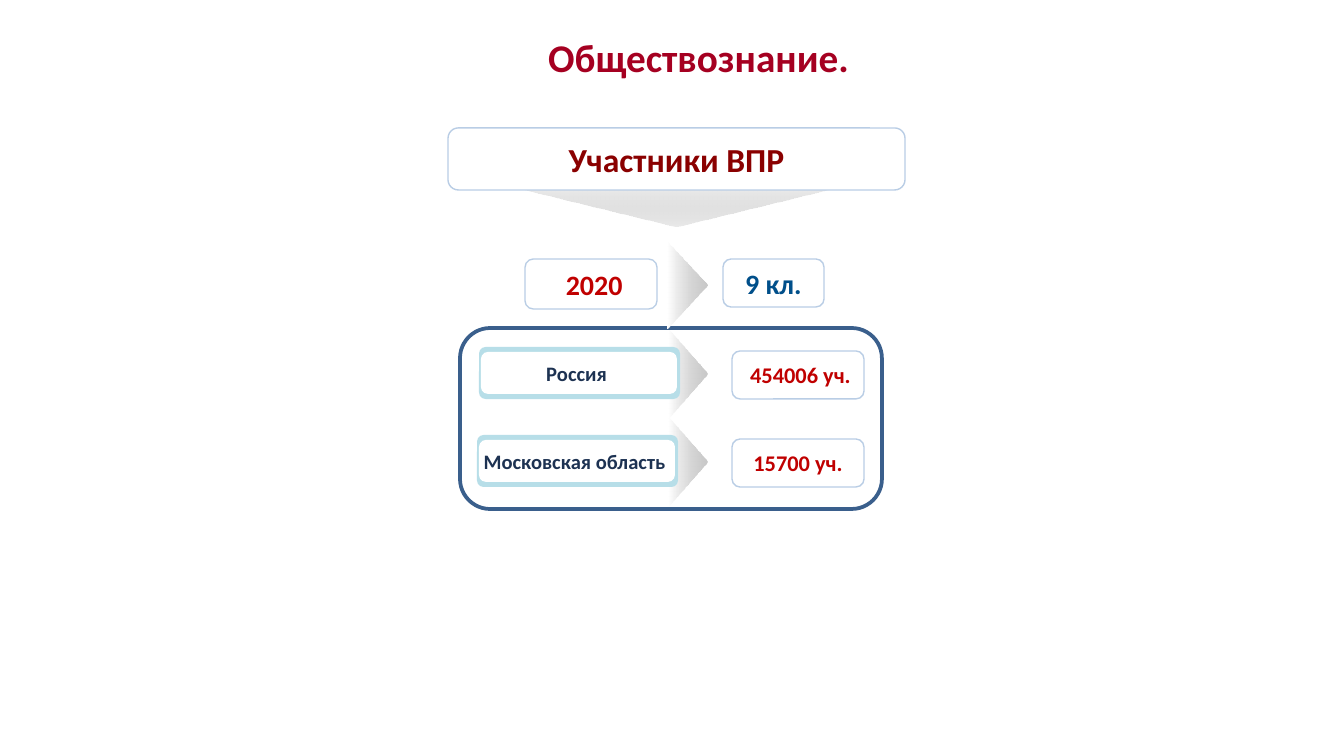
from lxml import etree
from pptx import Presentation
from pptx.dml.color import RGBColor
from pptx.enum.shapes import MSO_SHAPE
from pptx.enum.text import MSO_ANCHOR, MSO_AUTO_SIZE, PP_ALIGN
from pptx.oxml.ns import qn
from pptx.util import Emu, Pt

ROUND, TRI = MSO_SHAPE.ROUNDED_RECTANGLE, MSO_SHAPE.ISOSCELES_TRIANGLE
TOP, MIDDLE = MSO_ANCHOR.TOP, MSO_ANCHOR.MIDDLE
CENTER, FIXED = PP_ALIGN.CENTER, MSO_AUTO_SIZE.NONE
SCALE = 914400 / 134.4
COLORS = {
    "title": "A50021", "head": "8A0000", "red": "C00000", "blue": "004F8A",
    "navy": "1D3252", "white": "FFFFFF", "edge": "B9CDE5", "frame": "3A5F8C",
    "tab": "B7DEE8", "gray": "A6A6A6",
}
ROWS = [("Россия ", " 454006 уч.", 479), ("Московская область ", "15700 уч.", 477)]


def px(n):
    """Turn px into EMU."""
    return Emu(round(n * SCALE))


def color(name):
    """Look up a named colour."""
    return RGBColor.from_string(COLORS[name])


def write(shape, text, size, ink, anchor=MIDDLE, wrap=False):
    """Put one centred bold line into a shape."""
    frame = shape.text_frame
    form = {"margin_left": px(9), "margin_right": px(9), "margin_top": px(5),
            "margin_bottom": px(5), "vertical_anchor": anchor,
            "word_wrap": wrap, "auto_size": FIXED}
    for key, value in form.items():
        setattr(frame, key, value)
    para = frame.paragraphs[0]
    para.alignment = CENTER
    run = para.add_run()
    run.text = text
    for key, value in {"name": "Calibri", "size": Pt(size), "bold": True}.items():
        setattr(run.font, key, value)
    run.font.color.rgb = color(ink)
    return para


def add_box(slide, box, fill="white", line=None, width=0.75, adj=0.167):
    """Add a rounded box."""
    shape = slide.shapes.add_shape(ROUND, *map(px, box))
    shape.shadow.inherit = False
    shape.adjustments[0] = adj
    if fill:
        shape.fill.solid()
        shape.fill.fore_color.rgb = color(fill)
    else:
        shape.fill.background()
    if line:
        shape.line.color.rgb = color(line)
        shape.line.width = Pt(width)
    else:
        shape.line.fill.background()
    return shape


def add_point(slide, box, alpha, turn=0):
    """Add a fading triangle that points down before it is turned."""
    shape = slide.shapes.add_shape(TRI, *map(px, box))
    shape.shadow.inherit = False
    shape.rotation = turn
    shape.line.fill.background()
    shape.fill.gradient()
    shape.fill.gradient_angle = 270
    for stop, name, pos in zip(shape.fill.gradient_stops, ("gray", "white"), (0, 1)):
        stop.color.rgb = color(name)
        stop.position = pos
    props = shape._element.spPr
    props.find(qn("a:xfrm")).set("flipV", "1")
    tint = props.find(".//" + qn("a:srgbClr"))
    etree.SubElement(tint, qn("a:alpha")).set("val", str(alpha * 1000))


def add_title(slide, box, text):
    """Place and format the slide title."""
    title = slide.shapes.title
    for key, value in zip(("left", "top", "width", "height"), box):
        setattr(title, key, px(value))
    para = write(title, text, 21, "title", TOP, True)
    para.line_spacing = 0.9


def add_head(slide, x, y, w, h):
    """Add the heading box above its wide pointer."""
    add_point(slide, (x, y + 44, w, 55), 23)
    write(add_box(slide, (x, y, w, h), line="edge"), "Участники ВПР", 18, "head")


def add_row(slide, x, y, name, count):
    """Add one region tab, its pointer and its count."""
    add_point(slide, (643, y + 7, 90, 39), 60, 270)
    add_box(slide, (x, y, 201, 52), "tab", adj=0.127)
    write(add_box(slide, (x + 2, y + 5, 196, 42)), name, 11, "navy")
    write(add_box(slide, (732, y + 4, 132, 48), line="edge"), count, 12, "red")


def add_years(slide, x, y):
    """Add the year and class boxes."""
    write(add_box(slide, (x + 198, y, 101, 48), line="edge"), " 9 кл. ", 15, "blue")
    write(add_box(slide, (x, y, 132, 50), line="edge"), " 2020", 15, "red")


def main():
    """Build and save the slide."""
    deck = Presentation()
    deck.slide_width, deck.slide_height = px(1344), px(756)
    slide = deck.slides.add_slide(deck.slide_layouts[5])
    add_title(slide, (31, 34, 1344, 75), "Обществознание. ")
    add_head(slide, 448, 128, 457, 62)
    for i, (name, count, x) in enumerate(ROWS):
        add_row(slide, x, 347 + 88 * i, name, count)
    add_years(slide, 525, 259)
    add_box(slide, (460, 328, 422, 181), None, "frame", 2)
    add_point(slide, (644, 266, 87, 39), 60, 270)
    deck.save("out.pptx")


if __name__ == "__main__":
    main()
